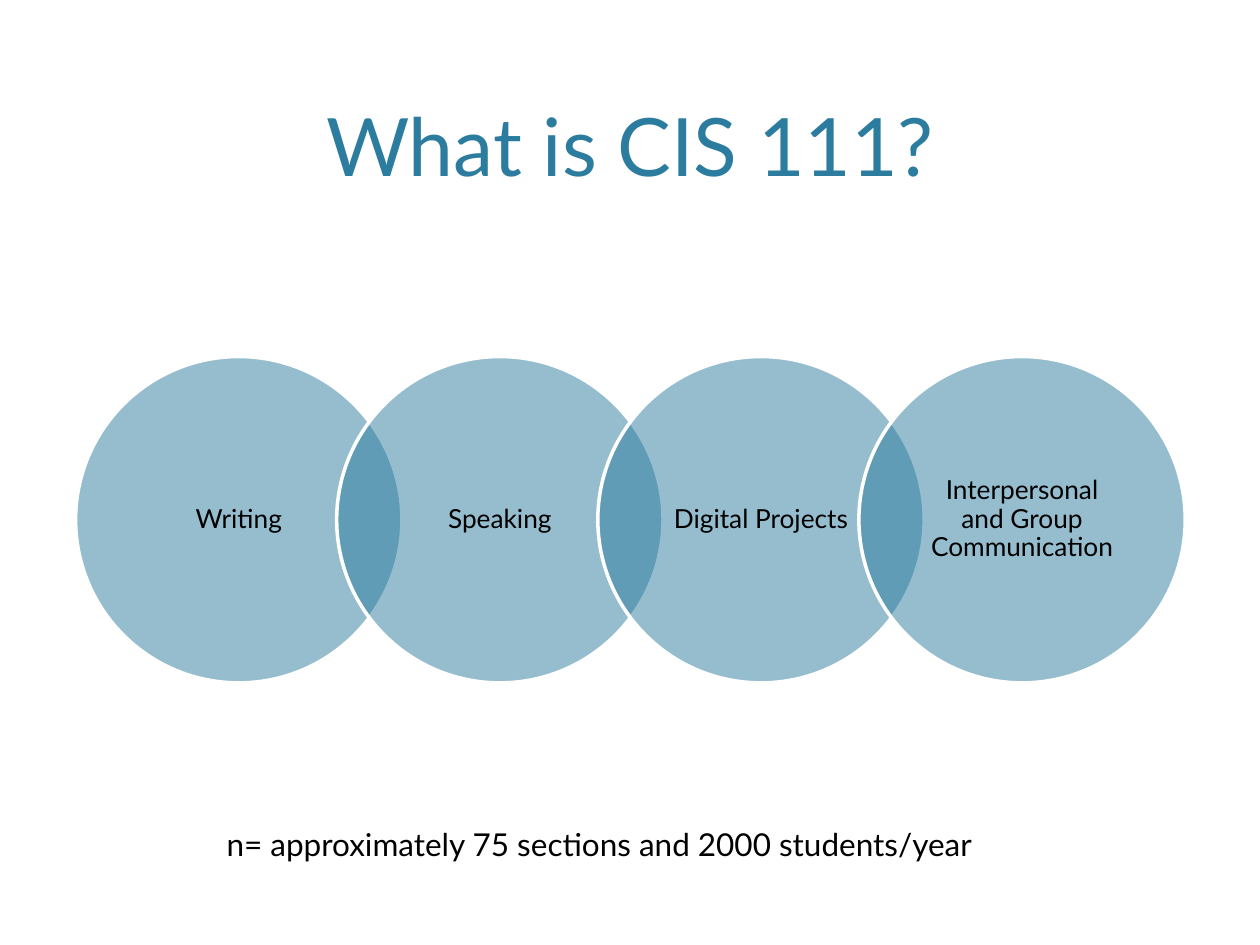
from dataclasses import dataclass

from lxml.etree import SubElement
from pptx import Presentation
from pptx.dml.color import RGBColor
from pptx.enum.shapes import MSO_SHAPE as Preset
from pptx.enum.text import MSO_ANCHOR as Anchor, MSO_AUTO_SIZE as AutoSize, PP_ALIGN as Align
from pptx.oxml.ns import qn
from pptx.shapes.group import GroupShape
from pptx.util import Pt

FONT = "Lato"
TEAL = "2C7C9F"
BLACK = "000000"
WHITE = "FFFFFF"
DIAMETER = 186.5
FIRST_LEFT = 43.2
STEP = 149.2
CIRCLE_TOP = 203.75
LABEL_INSET = 27.3


@dataclass
class Skill:
    label: str
    left: float


def color(hex_string: str) -> RGBColor:
    return RGBColor.from_string(hex_string)


def style(paragraph, size: float, hex_string: str, align: Align) -> None:
    paragraph.alignment = align
    paragraph.font.name = FONT
    paragraph.font.size = Pt(size)
    paragraph.font.color.rgb = color(hex_string)


def place(shape, left: float, top: float, width: float, height: float) -> None:
    shape.left, shape.top = Pt(left), Pt(top)
    shape.width, shape.height = Pt(width), Pt(height)


def draw_circle(diagram: GroupShape, skill: Skill) -> None:
    circle = diagram.shapes.add_shape(
        Preset.OVAL, Pt(skill.left), Pt(CIRCLE_TOP), Pt(DIAMETER), Pt(DIAMETER)
    )
    circle.shadow.inherit = False
    circle.fill.solid()
    circle.fill.fore_color.rgb = color(TEAL)
    fill_color = circle.fill._xPr.find(qn("a:solidFill"))[0]
    SubElement(fill_color, qn("a:alpha"), val="50000")
    circle.line.color.rgb = color(WHITE)
    circle.line.width = Pt(2)


def draw_label(diagram: GroupShape, skill: Skill) -> None:
    side = DIAMETER - 2 * LABEL_INSET
    label = diagram.shapes.add_textbox(
        Pt(skill.left + LABEL_INSET), Pt(CIRCLE_TOP + LABEL_INSET), Pt(side), Pt(side)
    )
    frame = label.text_frame
    frame.word_wrap = True
    frame.vertical_anchor = Anchor.MIDDLE
    frame.margin_left = frame.margin_right = Pt(10)
    frame.margin_top = frame.margin_bottom = Pt(1.5)
    frame.text = skill.label
    paragraph = frame.paragraphs[0]
    paragraph.line_spacing = 0.9
    style(paragraph, 15, BLACK, Align.CENTER)


def main() -> None:
    presentation = Presentation()
    presentation.slide_width, presentation.slide_height = Pt(720), Pt(540)
    slide = presentation.slides.add_slide(presentation.slide_layouts[5])

    title = slide.shapes.title
    place(title, 43.2, 8.64, 633.6, 105.12)
    title.text_frame.text = "What is CIS 111?"
    title.text_frame.vertical_anchor = Anchor.BOTTOM
    style(title.text_frame.paragraphs[0], 46, TEAL, Align.CENTER)

    labels = ("Writing", "Speaking", "Digital Projects", "Interpersonal and Group Communication")
    diagram = slide.shapes.add_group_shape()
    for index, label in enumerate(labels):
        skill = Skill(label, FIRST_LEFT + index * STEP)
        draw_circle(diagram, skill)
        draw_label(diagram, skill)

    enrollment = slide.shapes.add_textbox(Pt(122.4), Pt(468), Pt(504), Pt(29))
    enrollment.text_frame.word_wrap = True
    enrollment.text_frame.auto_size = AutoSize.SHAPE_TO_FIT_TEXT
    enrollment.text_frame.text = "n= approximately 75 sections and 2000 students/year"
    style(enrollment.text_frame.paragraphs[0], 18, BLACK, Align.LEFT)

    presentation.save("out.pptx")


if __name__ == "__main__":
    main()
